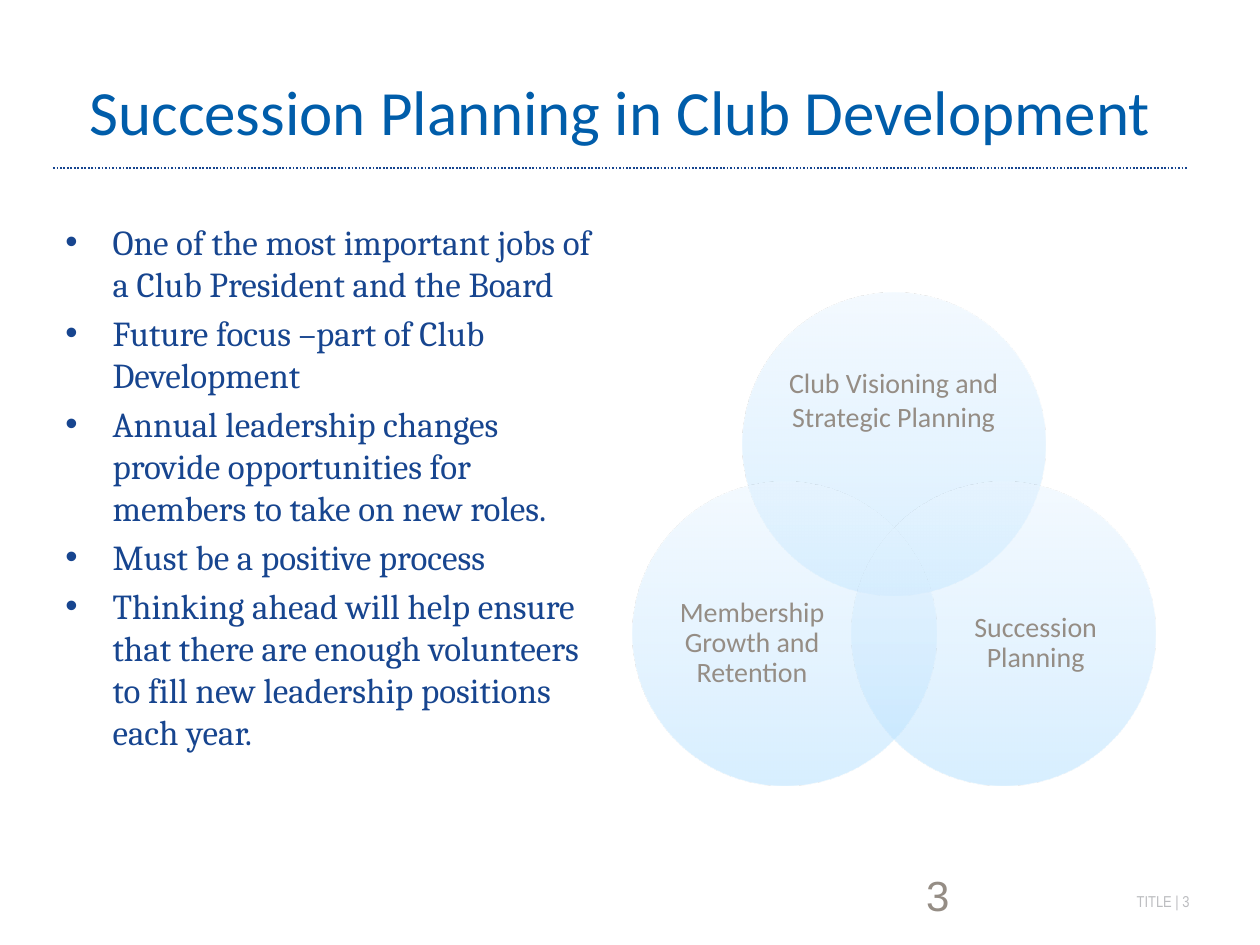
"""Build the slide on succession planning with its three-circle diagram."""
from math import cos, radians, sin

from pptx import Presentation
from pptx.dml.color import RGBColor
from pptx.enum.dml import MSO_LINE
from pptx.enum.shapes import MSO_CONNECTOR, MSO_SHAPE
from pptx.enum.text import MSO_ANCHOR, PP_ALIGN
from pptx.oxml import parse_xml
from pptx.oxml.ns import nsdecls
from pptx.oxml.xmlchemy import OxmlElement
from pptx.util import Cm, Pt

TITLE = "Succession Planning in Club Development"
POINTS = [
    "One of the most important jobs of a Club President and the Board",
    "Future focus –part of Club Development",
    "Annual leadership changes provide opportunities for members to take on new roles.",
    "Must be a positive process",
    "Thinking ahead will help ensure that there are enough volunteers "
    "to fill new leadership positions each year.",
]
CIRCLES = [
    ("Club Visioning and Strategic Planning", -90),
    ("Succession Planning", 30),
    ("Membership Growth and Retention", 150),
]
PAGE_NUMBER = "3"
FOOTER = "TITLE | 3"

NAVY, BLUE, GREY, PALE_GREY = "17458F", "005DAA", "958D85", "BCBDC0"
CIRCLE_GRADIENT = [(0, "B1E0FF"), (35, "C8E8FF"), (100, "EAF6FF")]
CIRCLE_OPACITY = 50
DIAGRAM_X, DIAGRAM_Y, ORBIT, DIAMETER = 18.02, 11.5, 2.55, 6.12
LEFT, WIDTH = 1.07, 22.86
PADDING = (0.25, 0.13, 0.25, 0.13)


def color(value):
    return RGBColor.from_string(value)


def add_bullet(paragraph, indent):
    properties = paragraph._p.get_or_add_pPr()
    properties.set("marL", str(Cm(indent)))
    properties.set("indent", str(-Cm(indent)))
    for tag, name, value in (("a:buFont", "typeface", "Arial"), ("a:buChar", "char", "•")):
        element = OxmlElement(tag)
        element.set(name, value)
        properties.append(element)


def add_text(slide, text, box, *, font, size, ink, align=PP_ALIGN.LEFT,
             anchor=MSO_ANCHOR.TOP, insets=(0, 0, 0, 0), spacing=None,
             before=0, bullet_indent=None):
    frame = slide.shapes.add_textbox(*map(Cm, box)).text_frame
    frame.word_wrap = True
    frame.vertical_anchor = anchor
    frame.margin_left, frame.margin_top, frame.margin_right, frame.margin_bottom = map(Cm, insets)
    lines = [text] if isinstance(text, str) else text
    for index, line in enumerate(lines):
        paragraph = frame.add_paragraph() if index else frame.paragraphs[0]
        paragraph.alignment = align
        if spacing:
            paragraph.line_spacing = spacing
        if index and before:
            paragraph.space_before = Pt(before)
        if bullet_indent:
            add_bullet(paragraph, bullet_indent)
        run = paragraph.add_run()
        run.text = line
        run.font.name, run.font.size = font, Pt(size)
        run.font.color.rgb = color(ink)


def add_rule(slide, y):
    rule = slide.shapes.add_connector(
        MSO_CONNECTOR.STRAIGHT, Cm(LEFT), Cm(y), Cm(LEFT + WIDTH), Cm(y))
    rule.line.color.rgb = color(NAVY)
    rule.line.width = Pt(1)
    rule.line.dash_style = MSO_LINE.ROUND_DOT
    rule._element.spPr.append(OxmlElement("a:effectLst"))


def add_circle(slide, left, top):
    circle = slide.shapes.add_shape(
        MSO_SHAPE.OVAL, Cm(left), Cm(top), Cm(DIAMETER), Cm(DIAMETER))
    stops = "".join(
        f'<a:gs pos="{position * 1000}"><a:srgbClr val="{tint}">'
        f'<a:alpha val="{CIRCLE_OPACITY * 1000}"/></a:srgbClr></a:gs>'
        for position, tint in CIRCLE_GRADIENT)
    circle._element.spPr.append(parse_xml(
        f'<a:gradFill {nsdecls("a")} rotWithShape="1"><a:gsLst>{stops}</a:gsLst>'
        '<a:lin ang="16200000" scaled="0"/></a:gradFill>'))
    circle.line.fill.background()
    circle.shadow.inherit = False


def add_diagram(slide):
    for label, angle in CIRCLES:
        left = DIAGRAM_X + ORBIT * cos(radians(angle)) - DIAMETER / 2
        top = DIAGRAM_Y + ORBIT * sin(radians(angle)) - DIAMETER / 2
        add_circle(slide, left, top)
        if angle < 0:
            box = (left + 0.82, top + 1.07, 4.47, 2.74)
            spacing, insets = None, (0, 0, 0, 0.56)
        else:
            width, edge = 3.66, 0.58
            offset = edge if angle > 90 else DIAMETER - edge - width
            box = (left + offset, top + 1.58, width, 3.35)
            spacing, insets = 0.9, (0, 0, 0, 0)
        add_text(slide, label, box, font="Calibri", size=16, ink=GREY, align=PP_ALIGN.CENTER,
                 anchor=MSO_ANCHOR.MIDDLE, insets=insets, spacing=spacing)


def main():
    deck = Presentation()
    deck.slide_width, deck.slide_height = Cm(25.4), Cm(19.05)
    slide = deck.slides.add_slide(deck.slide_layouts[6])
    add_text(slide, FOOTER, (19.89, 17.98, 4.24, 0.38), font="Arial Narrow", size=9,
             ink=PALE_GREY, align=PP_ALIGN.RIGHT, insets=(0, 0, 0.15, 0))
    add_rule(slide, 3.39)
    add_text(slide, TITLE, (LEFT, 1.27, WIDTH, 1.47), font="Calibri", size=36, ink=BLUE,
             align=PP_ALIGN.CENTER, insets=(0.25, 0.2, 0.25, 0.13))
    add_diagram(slide)
    add_text(slide, PAGE_NUMBER, (18.42, 17.27, 5.72, 1.02), font="Arial", size=24, ink=GREY,
             insets=(0.25, 0.25, 0.25, 0))
    add_text(slide, POINTS, (LEFT, 4.32, 11.18, 12.09), font="Cambria", size=20, ink=NAVY,
             insets=PADDING, before=4, bullet_indent=0.95)
    deck.save("out.pptx")


if __name__ == "__main__":
    main()
